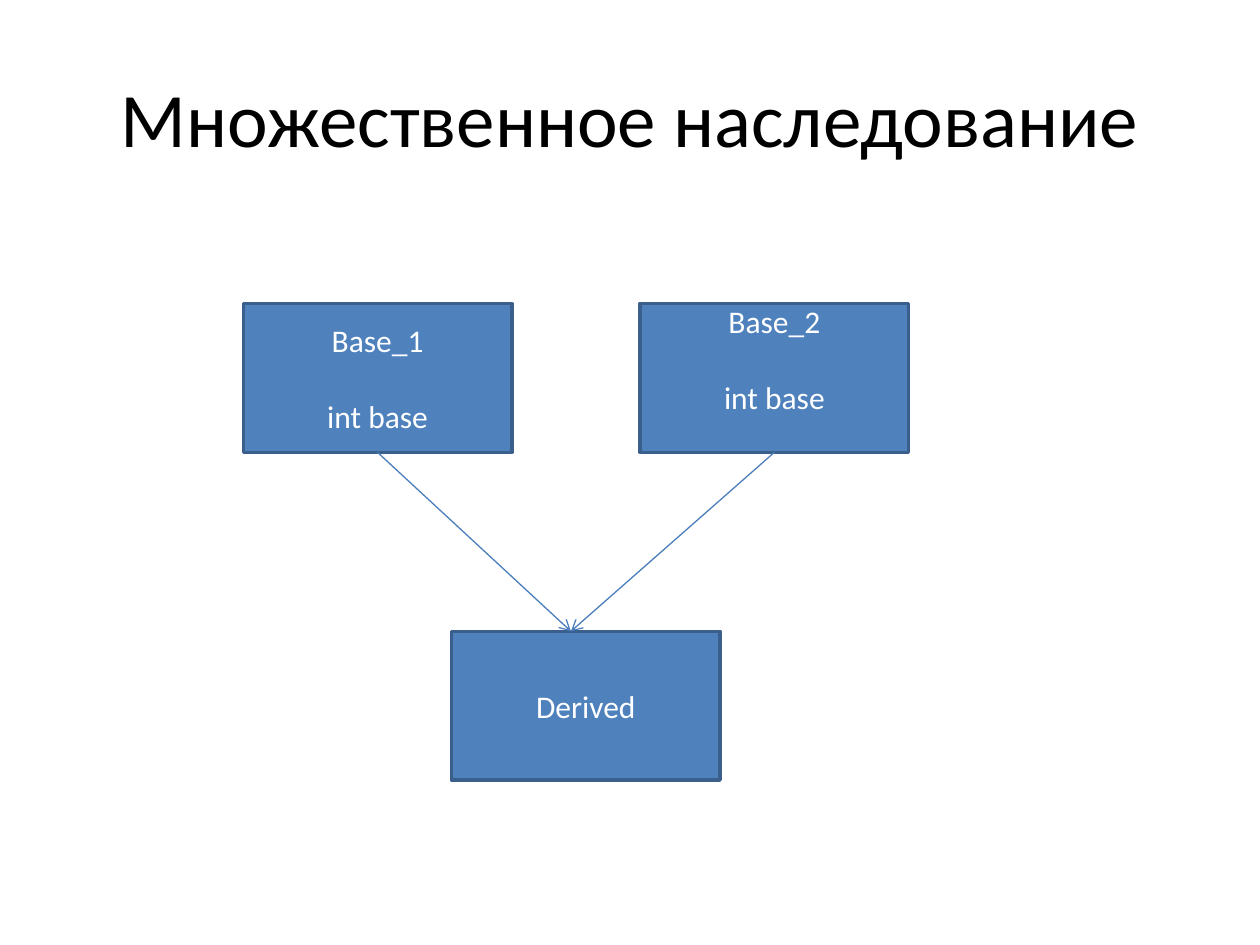
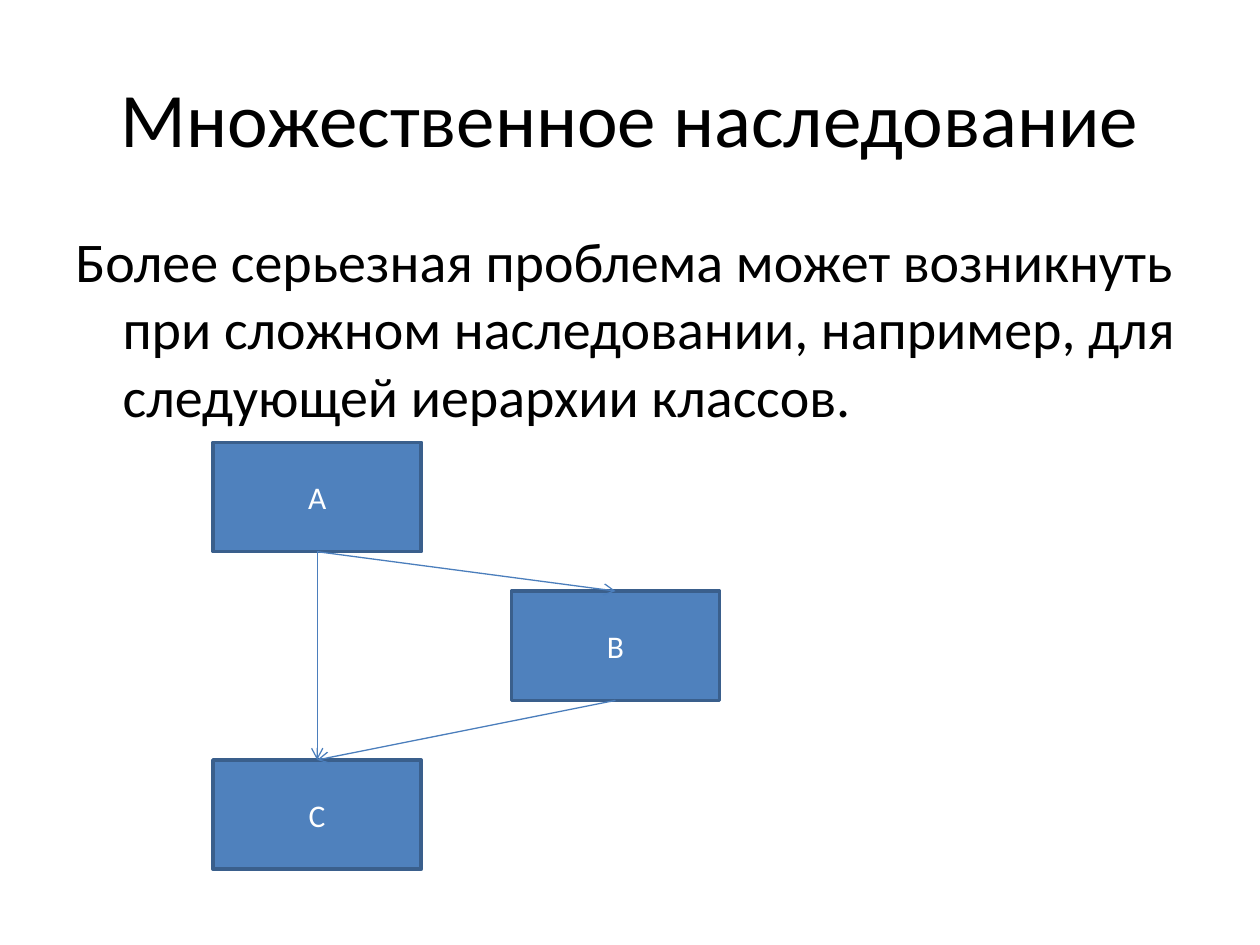
import pptx
import pptx.dml.color
import pptx.enum.shapes
import pptx.enum.text
import pptx.oxml.ns
import pptx.util
from dataclasses import dataclass
from lxml import etree

Pt = pptx.util.Pt
RGB = pptx.dml.color.RGBColor.from_string
ALIGN = pptx.enum.text.PP_ALIGN
ANCHOR = pptx.enum.text.MSO_ANCHOR
SHAPE = pptx.enum.shapes.MSO_SHAPE
CONNECTOR = pptx.enum.shapes.MSO_CONNECTOR
qn = pptx.oxml.ns.qn

TITLE = "Множественное наследование"

# boxes: name -> left, top, lines of text, extra space below the text
# arrows: from, to, sideways offset of the tip from the middle of the box
SLIDES = [
    {
        "body": None,
        "box_size": (153.5, 85),
        "boxes": {
            "Base_1": (139, 173.5, ["Base_1", "int base"], 0),
            "Derived": (258, 360.75, ["Derived"], 0),
            "Base_2": (365.75, 173.5, ["Base_2", "int base"], 22),
        },
        "arrows": [("Base_1", "Derived", -8.5), ("Base_2", "Derived", -8.5)],
    },
    {
        "body": "Более серьезная проблема может возникнуть при сложном "
                "наследовании, например, для следующей иерархии классов.",
        "box_size": (119, 62.5),
        "boxes": {
            "A": (121.75, 252.75, ["A"], 0),
            "B": (292.25, 337.75, ["B"], 0),
            "C": (121.75, 434.25, ["C"], 0),
        },
        "arrows": [("A", "C", 0), ("A", "B", 0), ("B", "C", 0)],
    },
]


@dataclass(frozen=True)
class Theme:
    font: str = "Calibri"
    text: str = "000000"
    box_text: str = "FFFFFF"
    box_fill: str = "4F81BD"
    box_line: str = "3A5F8C"
    arrow: str = "4B7EBC"
    title_size: float = 44
    body_size: float = 32
    box_size: float = 18
    box_line_width: float = 2
    arrow_width: float = 0.75
    line_gap: float = 22
    hanging: float = 27


THEME = Theme()
BOTTOM, TOP = 2, 0


def write(tf, lines, size, color=THEME.text, align=ALIGN.LEFT,
          anchor=ANCHOR.TOP, gap=0, hanging=0):
    """Fill a text frame, one paragraph for each line."""
    tf.word_wrap = True
    tf.vertical_anchor = anchor
    for i, line in enumerate(lines):
        p = tf.add_paragraph() if i else tf.paragraphs[0]
        p.alignment = align
        if i:
            p.space_before = Pt(gap)
        if hanging:
            pPr = p._p.get_or_add_pPr()
            pPr.set("marL", str(Pt(hanging)))
            pPr.set("indent", str(-Pt(hanging)))
        r = p.add_run()
        r.text = line
        r.font.name = THEME.font
        r.font.size = Pt(size)
        r.font.color.rgb = RGB(color)


def add_text(s, left, top, width, height, text, **style):
    sp = s.shapes.add_textbox(Pt(left), Pt(top), Pt(width), Pt(height))
    write(sp.text_frame, [text], **style)


def add_box(s, left, top, size, lines, space_below):
    sp = s.shapes.add_shape(SHAPE.RECTANGLE, Pt(left), Pt(top), *map(Pt, size))
    sp.shadow.inherit = False
    sp.fill.solid()
    sp.fill.fore_color.rgb = RGB(THEME.box_fill)
    sp.line.color.rgb = RGB(THEME.box_line)
    sp.line.width = Pt(THEME.box_line_width)
    tf = sp.text_frame
    tf.margin_bottom += Pt(space_below)
    write(tf, lines, THEME.box_size, color=THEME.box_text, align=ALIGN.CENTER,
          anchor=ANCHOR.MIDDLE, gap=THEME.line_gap)
    return sp


def add_arrow(s, start, end, offset):
    """Draw from the bottom of one box to the top of another."""
    line = s.shapes.add_connector(
        CONNECTOR.STRAIGHT,
        start.left + start.width // 2, start.top + start.height,
        end.left + end.width // 2 + Pt(offset), end.top)
    line.begin_connect(start, BOTTOM)
    if not offset:
        line.end_connect(end, TOP)
    line.line.color.rgb = RGB(THEME.arrow)
    line.line.width = Pt(THEME.arrow_width)
    etree.SubElement(line.line._get_or_add_ln(), qn("a:tailEnd"), type="arrow")
    etree.SubElement(line._element.spPr, qn("a:effectLst"))


def add_slide(prs, content):
    s = prs.slides.add_slide(prs.slide_layouts[6])
    add_text(s, 36, 21.6, 648, 90, TITLE, size=THEME.title_size,
             align=ALIGN.CENTER, anchor=ANCHOR.MIDDLE)
    if content["body"]:
        add_text(s, 36, 126, 648, 356.4, content["body"],
                 size=THEME.body_size, hanging=THEME.hanging)
    boxes = {
        name: add_box(s, left, top, content["box_size"], lines, space_below)
        for name, (left, top, lines, space_below) in content["boxes"].items()
    }
    for start, end, offset in content["arrows"]:
        add_arrow(s, boxes[start], boxes[end], offset)


def main():
    prs = pptx.Presentation()
    prs.slide_width, prs.slide_height = Pt(720), Pt(540)
    for content in SLIDES:
        add_slide(prs, content)
    prs.save("out.pptx")


if __name__ == "__main__":
    main()
